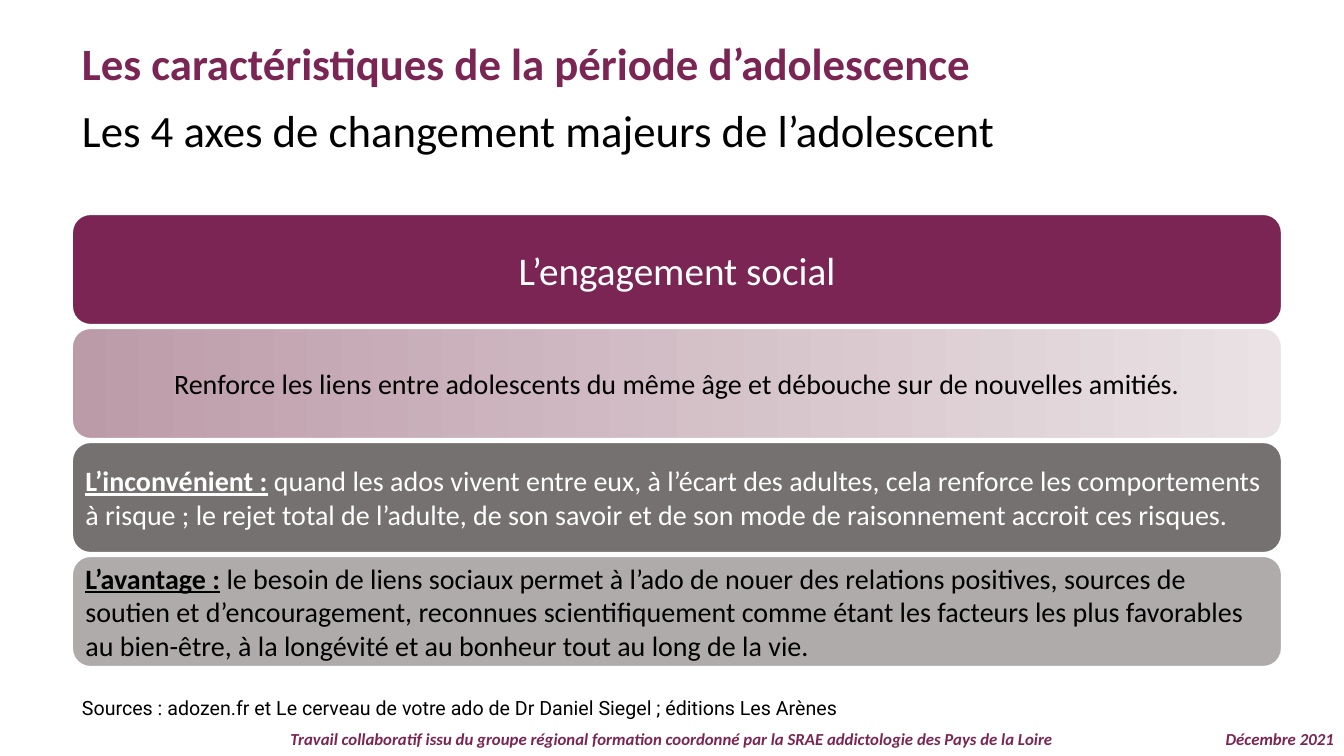
import pptx
import pptx.dml.color
import pptx.enum.shapes
import pptx.enum.text
import pptx.util

ALIGN = pptx.enum.text.PP_ALIGN
ANCHOR = pptx.enum.text.MSO_ANCHOR

HEADING = "Les caractéristiques de la période d’adolescence"
SUBHEADING = "Les 4 axes de changement majeurs de l’adolescent"
SOURCES = ("Sources\u00a0: adozen.fr et Le cerveau de votre ado de Dr Daniel Siegel ; "
           "éditions Les Arènes")
CREDIT = ("Travail collaboratif issu du groupe régional formation coordonné par "
          "la SRAE addictologie des Pays de la Loire")
DATE = "Décembre 2021"

# lead-in, text, fill colours, text colour, size, alignment, inset in px
BANDS = [
    ("", "L’engagement social", ["plum"], "white", "band_title", ALIGN.CENTER, 12),
    ("", "Renforce les liens entre adolescents du même âge et débouche sur de "
     "nouvelles amitiés.", ["rose", "pale_rose"], "black", "body", ALIGN.CENTER, 8),
    ("L’inconvénient :", "quand les ados vivent entre eux, à l’écart des adultes, "
     "cela renforce les comportements à risque ; le rejet total de l’adulte, de son "
     "savoir et de son mode de raisonnement accroit ces risques.",
     ["dark_gray"], "white", "body", ALIGN.LEFT, 8),
    ("L’avantage :", "le besoin de liens sociaux permet à l’ado de nouer des "
     "relations positives, sources de soutien et d’encouragement, reconnues "
     "scientifiquement comme étant les facteurs les plus favorables au bien-être, à "
     "la longévité et au bonheur tout au long de la vie.",
     ["light_gray"], "black", "body", ALIGN.LEFT, 8),
]

THEME = {
    "colors": {"plum": "7A2553", "rose": "BC9BA8", "pale_rose": "EAE2E5",
               "dark_gray": "767171", "light_gray": "AFABAB",
               "white": "FFFFFF", "black": "000000"},
    "sizes": {"heading": 32, "band_title": 28, "body": 20, "source": 14, "footer": 12},
    "font": "Calibri",
    "source_font": "Roboto",
}
LEFT, BAND_TOP, BAND_WIDTH, BAND_HEIGHT, BAND_PITCH = 72, 214, 1210, 111, 114


def px(length):
    return pptx.util.Emu(round(length * 914400 / 100.8))


def color(name):
    return pptx.dml.color.RGBColor.from_string(THEME["colors"][name])


def apply(target, values):
    for name, value in values.items():
        setattr(target, name, value)


def add_span(para, text, size, color_name, **font_values):
    span = para.add_run()
    span.text = text
    apply(span.font, {"name": THEME["font"], "size": pptx.util.Pt(THEME["sizes"][size]),
                      "bold": False, **font_values})
    span.font.color.rgb = color(color_name)


def set_frame(shape, inset_x, inset_y, anchor):
    frame = shape.text_frame
    apply(frame, {"word_wrap": True, "auto_size": pptx.enum.text.MSO_AUTO_SIZE.NONE,
                  "vertical_anchor": anchor,
                  "margin_left": px(inset_x), "margin_right": px(inset_x),
                  "margin_top": px(inset_y), "margin_bottom": px(inset_y)})
    return frame.paragraphs[0]


def write_text(shape, place, text, size, color_name, para_values,
               anchor=ANCHOR.TOP, **font_values):
    apply(shape, dict(zip(("left", "top", "width", "height"), map(px, place))))
    para = set_frame(shape, 10, 5, anchor)
    apply(para, para_values)
    add_span(para, text, size, color_name, **font_values)


def add_band(slide, index, lead, text, fills, ink, size, align, inset):
    band = slide.shapes.add_shape(
        pptx.enum.shapes.MSO_SHAPE.ROUNDED_RECTANGLE, px(LEFT),
        px(BAND_TOP + index * BAND_PITCH), px(BAND_WIDTH), px(BAND_HEIGHT))
    band.shadow.inherit = False
    if len(fills) == 1:
        band.fill.solid()
        band.fill.fore_color.rgb = color(fills[0])
    else:
        band.fill.gradient()
        band.fill.gradient_angle = 0
        for stop, name in zip(band.fill.gradient_stops, fills):
            stop.color.rgb = color(name)
    band.line.color.rgb = color("white")
    band.line.width = pptx.util.Pt(1.5)
    para = set_frame(band, inset, inset, ANCHOR.MIDDLE)
    para.alignment = align
    if lead:
        add_span(para, lead, size, ink, bold=True, underline=True)
        add_span(para, "\u00a0", size, ink, bold=True)
    add_span(para, text, size, ink)


def main():
    deck = pptx.Presentation()
    deck.slide_width, deck.slide_height = px(1344), px(756)
    slide = deck.slides.add_slide(deck.slide_layouts[5])

    write_text(slide.shapes.title, (LEFT, 31, 1022, 65), HEADING, "heading", "plum",
               {"alignment": ALIGN.LEFT}, bold=True)
    for index, band in enumerate(BANDS):
        add_band(slide, index, *band)

    footer_font = {"bold": True, "italic": True}
    texts = [
        ((LEFT, 96, 1143, 75), SUBHEADING, "heading", "black",
         {"line_spacing": 0.9}, {"anchor": ANCHOR.MIDDLE}),
        ((LEFT, 689, 1133, 34), SOURCES, "source", "black",
         {"line_spacing": 1.07}, {"name": THEME["source_font"]}),
        ((0, 726, 1344, 30), CREDIT, "footer", "plum",
         {"line_spacing": 0.9, "alignment": ALIGN.CENTER}, footer_font),
        ((1199, 726, 145, 30), DATE, "footer", "plum",
         {"line_spacing": 0.9, "alignment": ALIGN.RIGHT}, footer_font),
    ]
    for place, text, size, ink, para_values, extras in texts:
        box = slide.shapes.add_textbox(0, 0, 0, 0)
        write_text(box, place, text, size, ink, para_values, **extras)

    deck.save("out.pptx")


if __name__ == "__main__":
    main()
